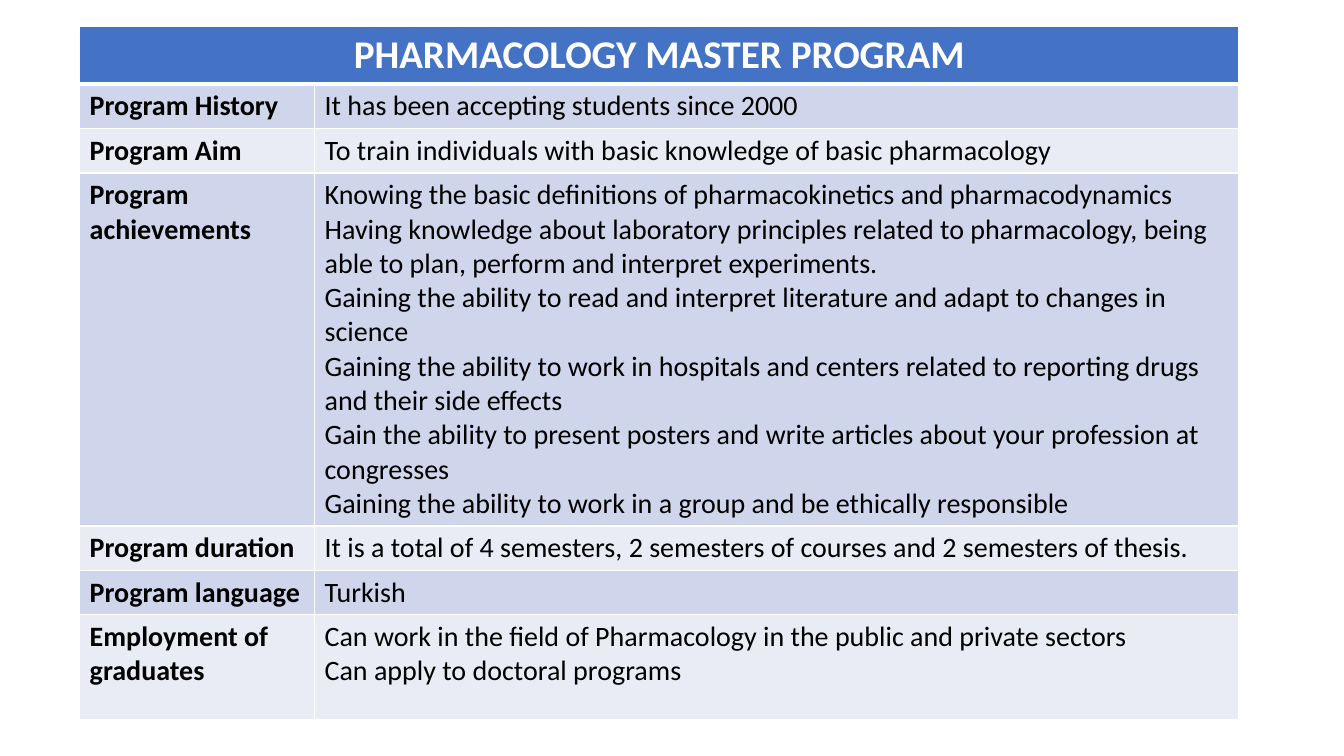
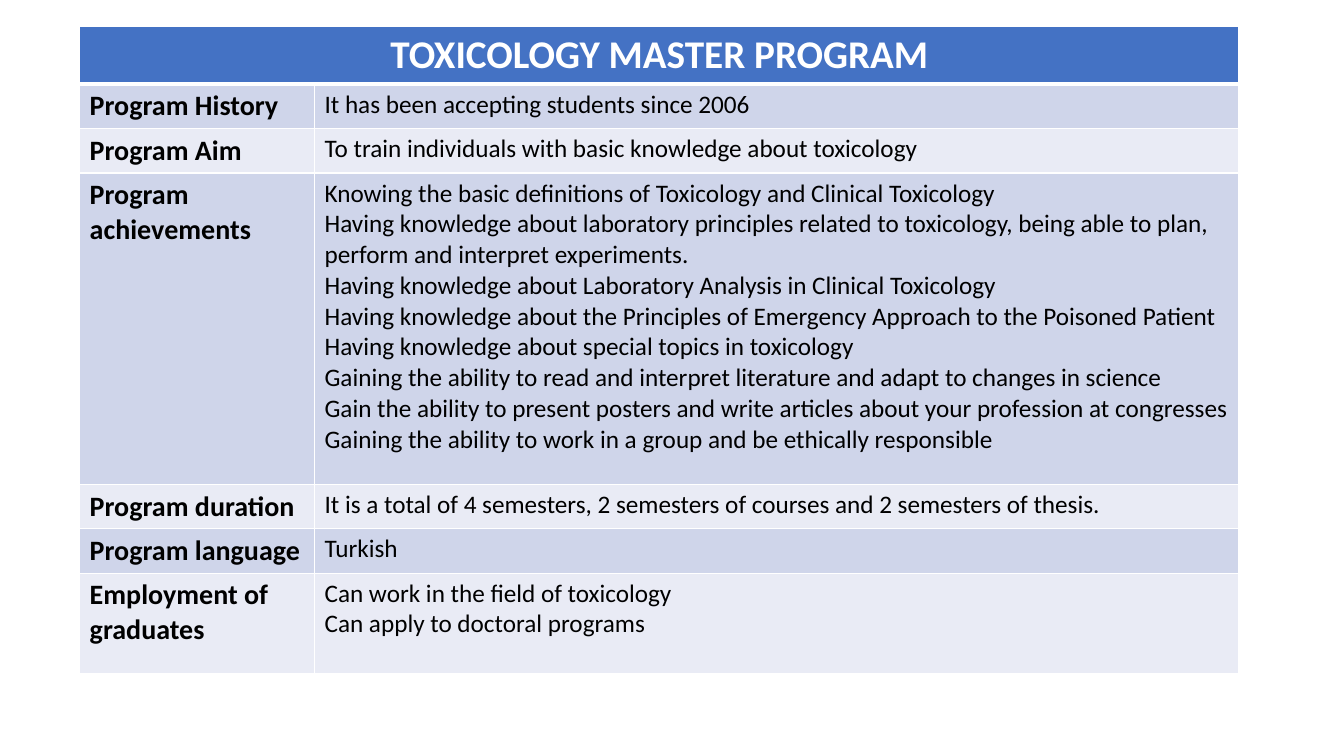
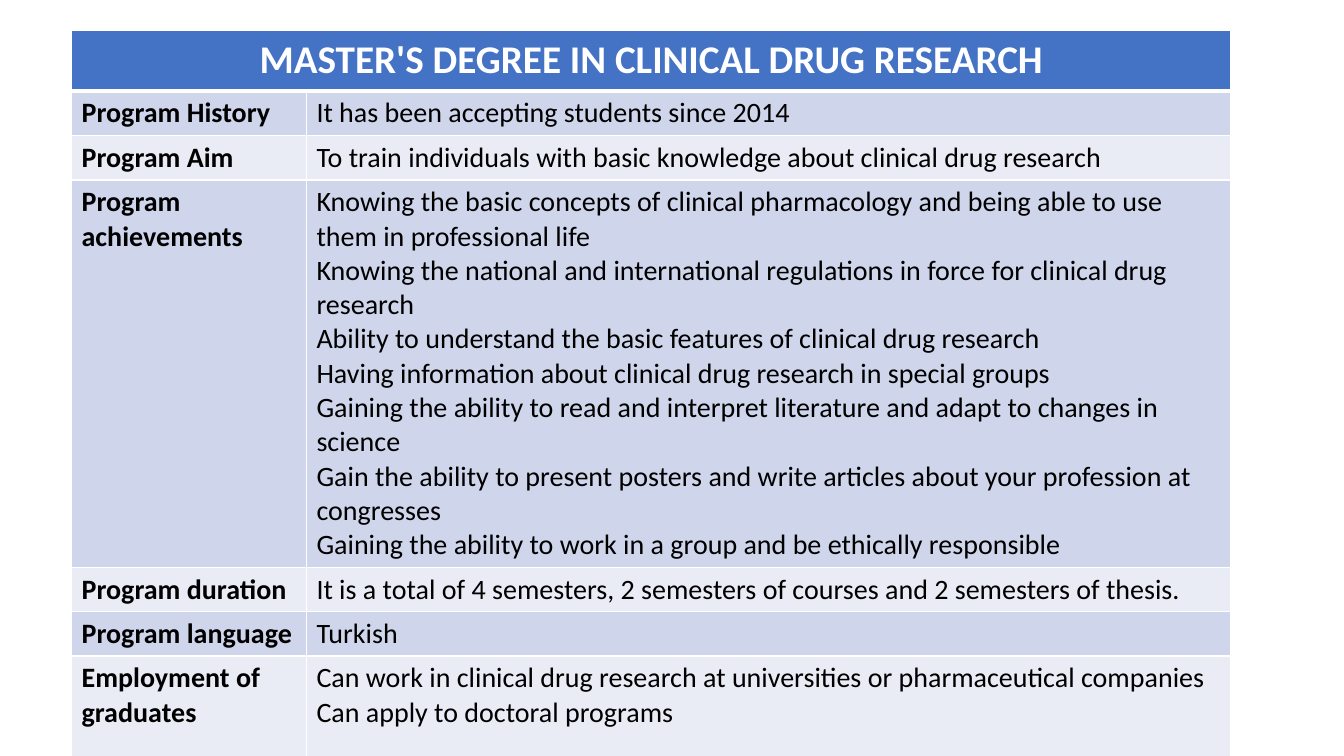
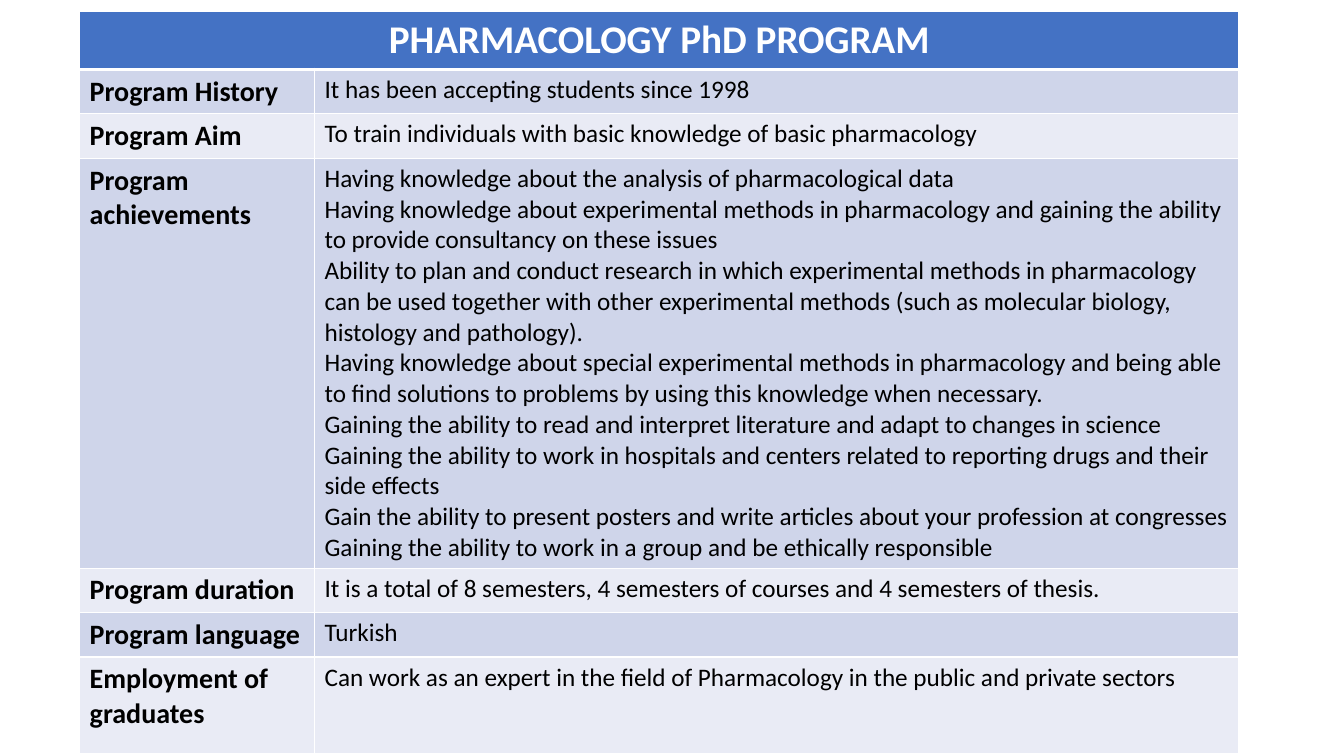
from pptx import Presentation
from pptx.util import Pt
from pptx.dml.color import RGBColor
from pptx.enum.text import PP_ALIGN as ALIGN
from pptx.oxml.ns import qn
from lxml.etree import SubElement

FONT = "Calibri"
WHITE, BLACK, BLUE = "FFFFFF", "000000", "4472C4"
BANDS = ["CFD5EA", "E9EBF5"]
COLS = [167.8, 660.2]
LABELS = ["Program History", "Program Aim", "Program achievements",
          "Program duration", "Program language", "Employment of graduates"]

LITERATURE = "Gaining the ability to read and interpret literature and adapt to changes in science"
HOSPITALS = "Gaining the ability to work in hospitals and centers related to reporting drugs and their side effects"
CONGRESSES = "Gain the ability to present posters and write articles about your profession at congresses"
GROUP = "Gaining the ability to work in a group and be ethically responsible"
LABORATORY = ("Having knowledge about laboratory principles related to {}, "
              "being able to plan, perform and interpret experiments.")
DOCTORAL = "Can apply to doctoral programs"

programs = [
    dict(title="PHARMACOLOGY MASTER PROGRAM", left=56.9, top=18.7, size=20,
         head=39, line=29.5, tall=190.8, last=74.9,
         since=2000, terms=4, aim="of basic pharmacology",
         achievements=[
             "Knowing the basic definitions of pharmacokinetics and pharmacodynamics",
             LABORATORY.format("pharmacology"),
             LITERATURE, HOSPITALS, CONGRESSES, GROUP],
         jobs=["Can work in the field of Pharmacology in the public and private sectors",
               DOCTORAL]),
    dict(title="TOXICOLOGY MASTER PROGRAM", left=56.9, top=18.7, size=18,
         head=39, line=28, tall=222.4, last=72,
         since=2006, terms=4, aim="about toxicology",
         achievements=[
             "Knowing the basic definitions of Toxicology and Clinical Toxicology",
             LABORATORY.format("toxicology"),
             "Having knowledge about Laboratory Analysis in Clinical Toxicology",
             "Having knowledge about the Principles of Emergency Approach to the Poisoned Patient",
             "Having knowledge about special topics in toxicology",
             LITERATURE, CONGRESSES, GROUP],
         jobs=["Can work in the field of toxicology", DOCTORAL]),
    dict(title="MASTER'S DEGREE IN CLINICAL DRUG RESEARCH", left=51.1, top=21.9, size=20,
         head=43.2, line=30.2, tall=193.7, last=76.3,
         since=2014, terms=4, aim="about clinical drug research",
         achievements=[
             "Knowing the basic concepts of clinical pharmacology and being able to use them in professional life",
             "Knowing the national and international regulations in force for clinical drug research",
             "Ability to understand the basic features of clinical drug research",
             "Having information about clinical drug research in special groups",
             LITERATURE, CONGRESSES, GROUP],
         jobs=["Can work in clinical drug research at universities or pharmaceutical companies",
               DOCTORAL]),
    dict(title="PHARMACOLOGY PhD PROGRAM", left=56.9, top=8.2, size=18,
         head=39, line=27.4, tall=285.1, last=69.1,
         since=1998, terms=8, aim="of basic pharmacology",
         achievements=[
             "Having knowledge about the analysis of pharmacological data",
             "Having knowledge about experimental methods in pharmacology and gaining the ability to provide consultancy on these issues",
             "Ability to plan and conduct research in which experimental methods in pharmacology can be used together with other experimental methods (such as molecular biology, histology and pathology).",
             "Having knowledge about special experimental methods in pharmacology and being able to find solutions to problems by using this knowledge when necessary.",
             LITERATURE, HOSPITALS, CONGRESSES, GROUP],
         jobs=["Can work as an expert in the field of Pharmacology in the public and private sectors"]),
]


def rgb(value):
    return RGBColor.from_string(value)


def fill_cell(cell, lines, fill, size=20, color=BLACK, bold=False,
              align=ALIGN.LEFT, top=1, bottom=1):
    tcPr = cell._tc.get_or_add_tcPr()
    for side, width in [("L", 1), ("R", 1), ("T", top), ("B", bottom)]:
        ln = SubElement(tcPr, qn(f"a:ln{side}"), w=str(Pt(width)))
        SubElement(SubElement(ln, qn("a:solidFill")), qn("a:srgbClr"), val=WHITE)
    cell.fill.solid()
    cell.fill.fore_color.rgb = rgb(fill)
    tf = cell.text_frame
    for i, line in enumerate(lines):
        p = tf.add_paragraph() if i else tf.paragraphs[0]
        p.alignment = align
        r = p.add_run()
        r.text = line
        r.font.name, r.font.size, r.font.bold = FONT, Pt(size), bold
        r.font.color.rgb = rgb(color)


prs = Presentation()
prs.slide_width, prs.slide_height = Pt(960), Pt(540)

for prog in programs:
    s = prs.slides.add_slide(prs.slide_layouts[6])
    line = prog["line"]
    heights = [prog["head"], line, line, prog["tall"], line, line, prog["last"]]
    table = s.shapes.add_table(len(heights), len(COLS), Pt(prog["left"]), Pt(prog["top"]),
                               Pt(sum(COLS)), Pt(sum(heights))).table
    for col, width in zip(table.columns, COLS):
        col.width = Pt(width)
    for row, height in zip(table.rows, heights):
        row.height = Pt(height)

    table.cell(0, 0).merge(table.cell(0, 1))
    for col, lines in enumerate([[prog["title"]], []]):
        fill_cell(table.cell(0, col), lines, BLUE, size=28, color=WHITE, bold=True,
                  align=ALIGN.CENTER, bottom=3)

    terms = prog["terms"]
    half = terms // 2
    details = [
        [f"It has been accepting students since {prog['since']}"],
        [f"To train individuals with basic knowledge {prog['aim']}"],
        prog["achievements"],
        [f"It is a total of {terms} semesters, {half} semesters of courses and {half} semesters of thesis."],
        ["Turkish"],
        prog["jobs"],
    ]
    for i, (label, detail) in enumerate(zip(LABELS, details)):
        band = BANDS[i % 2]
        top = 1 if i else 3
        fill_cell(table.cell(i + 1, 0), [label], band, bold=True, top=top)
        fill_cell(table.cell(i + 1, 1), detail, band, size=prog["size"], top=top)

prs.save("out.pptx")
